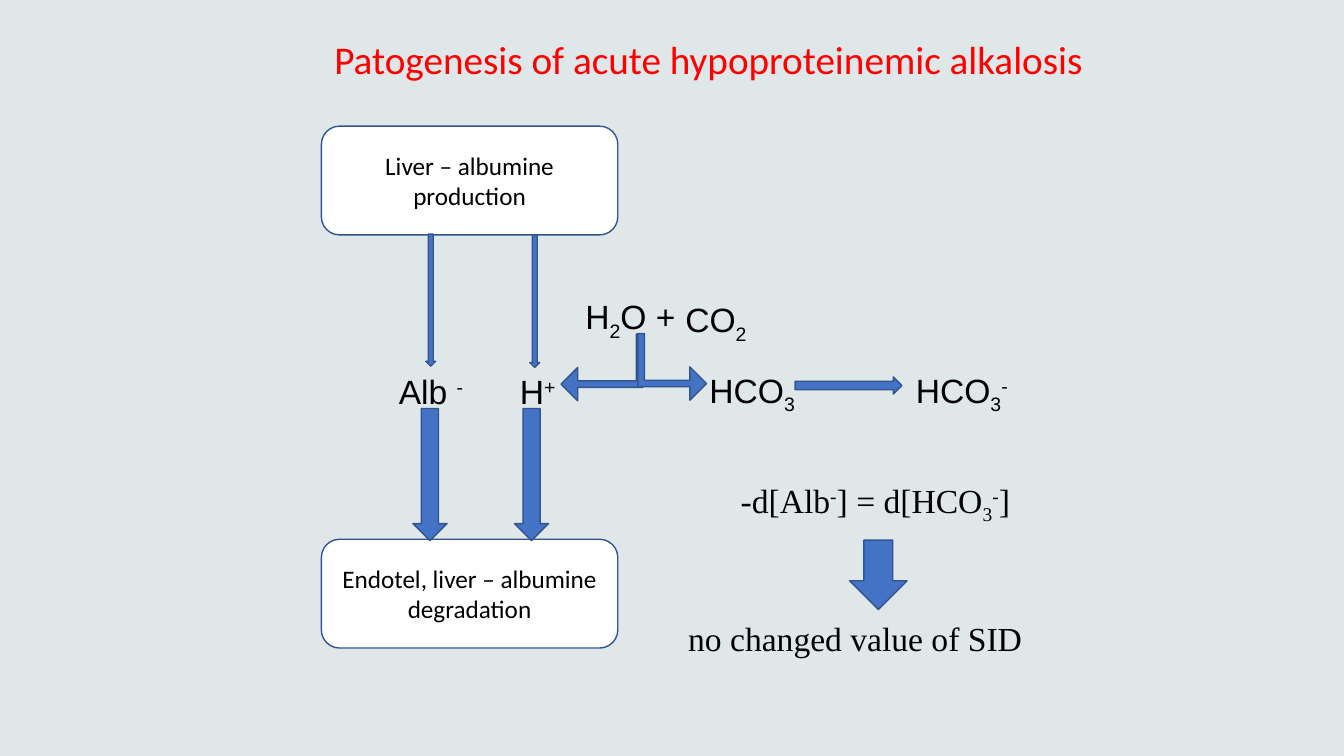
from dataclasses import dataclass

from pptx import Presentation
from pptx.dml.color import RGBColor
from pptx.enum.shapes import MSO_SHAPE
from pptx.enum.text import MSO_ANCHOR, MSO_AUTO_SIZE, PP_ALIGN
from pptx.util import Cm, Pt

ROUND_BOX = MSO_SHAPE.ROUNDED_RECTANGLE
RIGHT_ARROW = MSO_SHAPE.RIGHT_ARROW
DOWN_ARROW = MSO_SHAPE.DOWN_ARROW
BENT_ARROW = MSO_SHAPE.BENT_UP_ARROW
MIDDLE = MSO_ANCHOR.MIDDLE
TOP = MSO_ANCHOR.TOP
CENTER = PP_ALIGN.CENTER
LEFT = PP_ALIGN.LEFT
FIT_SHAPE = MSO_AUTO_SIZE.SHAPE_TO_FIT_TEXT
NO_FIT = MSO_AUTO_SIZE.NONE

BACKGROUND = "E0E7E8"
BLUE = "4472C4"
OUTLINE = "325491"
WHITE = "FFFFFF"
BLACK = "000000"
RED = "FF0000"

SUB, SUP = -25000, 30000
BENT_ADJUSTMENTS = (0.098, 0.25, 0.25)


@dataclass(frozen=True)
class Label:
    place: tuple
    spans: tuple
    font: str = "Arial"
    wrap: bool = False
    align: PP_ALIGN = LEFT


@dataclass(frozen=True)
class Organ:
    top: float
    caption: str


@dataclass(frozen=True)
class Arrow:
    place: tuple
    kind: MSO_SHAPE = RIGHT_ARROW
    turn: int = 0
    flip: bool = False
    adjustments: tuple = ()


LABELS = (
    Label((9.8, 9.22, 2.18, 1.27), (("Alb ", 0), ("-", SUP))),
    Label((12.85, 9.22, 1.47, 1.27), (("H", 0), ("+", SUP))),
    Label((17.63, 9.19, 2.92, 1.27), (("HCO", 0), ("3", SUB))),
    Label((22.83, 9.19, 2.92, 1.27), (("HCO", 0), ("3", SUB), ("-", SUP))),
    Label((14.5, 7.34, 2.84, 1.27), (("H", 0), ("2", SUB), ("O +", 0))),
    Label((17.02, 7.42, 2.11, 1.27), (("CO", 0), ("2", SUB))),
    Label((17.73, 11.96, 8.66, 1.96),
          (("-d[Alb", 0), ("-", SUP), ("] = d[HCO", 0), ("3", SUB), ("-", SUP), ("]", 0)),
          "Times New Roman", True, CENTER),
    Label((16.84, 15.44, 9.42, 1.96), (("no changed value of SID", 0),),
          "Times New Roman", True, CENTER),
)
ORGANS = (
    Organ(3.18, "Liver – albumine production"),
    Organ(13.59, "Endotel, liver – albumine degradation"),
)
ARROWS = (
    Arrow((9.19, 7.44, 3.33, 0.25), turn=90),
    Arrow((11.81, 7.47, 3.33, 0.25), turn=90),
    Arrow((9.17, 11.53, 3.33, 0.86), turn=90),
    Arrow((11.73, 11.53, 3.33, 0.86), turn=90),
    Arrow((14.33, 8.23, 1.68, 2.06), BENT_ARROW, 90, True, BENT_ADJUSTMENTS),
    Arrow((16.1, 8.38, 1.68, 1.73), BENT_ARROW, 90, False, BENT_ADJUSTMENTS),
    Arrow((20.04, 9.5, 2.69, 0.43)),
    Arrow((21.41, 13.61, 1.45, 1.75), DOWN_ARROW),
)


def colour(value: str) -> RGBColor:
    return RGBColor.from_string(value)


def lengths(place: tuple) -> list:
    return [Cm(value) for value in place]


def apply(target, **values) -> None:
    for name, value in values.items():
        setattr(target, name, value)


def write(frame, spans: tuple, font: str, size: int, ink: str, align: PP_ALIGN) -> None:
    para = frame.paragraphs[0]
    para.alignment = align
    for text, baseline in spans:
        span = para.add_run()
        span.text = text
        apply(span.font, name=font, size=Pt(size))
        span.font.color.rgb = colour(ink)
        if baseline:
            span._r.get_or_add_rPr().set("baseline", str(baseline))


def add_shape(page, kind: MSO_SHAPE, place: tuple, fill: str):
    shape = page.shapes.add_shape(kind, *lengths(place))
    shape.shadow.inherit = False
    shape.fill.solid()
    shape.fill.fore_color.rgb = colour(fill)
    shape.line.color.rgb = colour(OUTLINE)
    shape.line.width = Pt(1)
    return shape


def add_title(page) -> None:
    title = page.shapes.title
    left, top, width, height = lengths((6.32, -0.23, 23.29, 3.4))
    apply(title, left=left, top=top, width=width, height=height)
    apply(title.text_frame, word_wrap=True, vertical_anchor=MIDDLE, auto_size=NO_FIT)
    write(title.text_frame, (("Patogenesis of acute hypoproteinemic alkalosis ", 0),),
          "Calibri", 28, RED, CENTER)


def add_label(page, label: Label) -> None:
    box = page.shapes.add_textbox(*lengths(label.place))
    apply(box.text_frame, word_wrap=label.wrap, vertical_anchor=TOP, auto_size=FIT_SHAPE)
    write(box.text_frame, label.spans, label.font, 24, BLACK, label.align)


def add_organ(page, organ: Organ) -> None:
    box = add_shape(page, ROUND_BOX, (8.1, organ.top, 7.47, 2.74), WHITE)
    apply(box.text_frame, word_wrap=True, vertical_anchor=MIDDLE)
    write(box.text_frame, ((organ.caption, 0),), "Calibri", 18, BLACK, CENTER)


def add_arrow(page, arrow: Arrow) -> None:
    shape = add_shape(page, arrow.kind, arrow.place, BLUE)
    shape.rotation = arrow.turn
    for index, value in enumerate(arrow.adjustments):
        shape.adjustments[index] = value
    if arrow.flip:
        shape._element.spPr.xfrm.set("flipV", "1")


def main() -> None:
    deck = Presentation()
    apply(deck, slide_width=Cm(33.87), slide_height=Cm(19.05))
    page = deck.slides.add_slide(deck.slide_layouts[5])
    page.background.fill.solid()
    page.background.fill.fore_color.rgb = colour(BACKGROUND)
    add_title(page)
    for label in LABELS:
        add_label(page, label)
    for organ in ORGANS:
        add_organ(page, organ)
    for arrow in ARROWS:
        add_arrow(page, arrow)
    deck.save("out.pptx")


if __name__ == "__main__":
    main()
